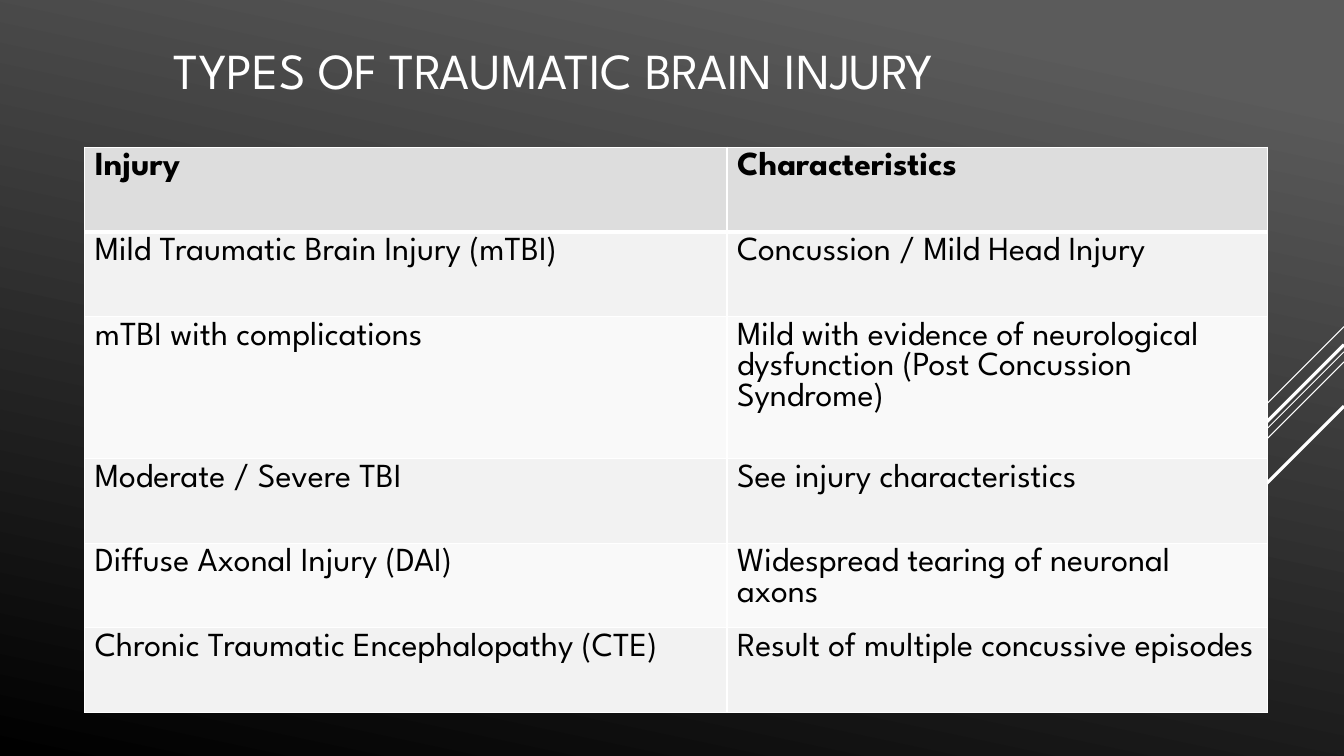
from lxml.etree import SubElement
from pptx import Presentation
from pptx.dml.color import RGBColor
from pptx.enum.shapes import MSO_CONNECTOR
from pptx.enum.text import MSO_ANCHOR, PP_ALIGN
from pptx.oxml.ns import qn
from pptx.util import Inches, Pt

WHITE = RGBColor(0xFF, 0xFF, 0xFF)
BLACK = RGBColor(0x00, 0x00, 0x00)
CHARCOAL = RGBColor(0x5B, 0x5B, 0x5B)
HEADER_GREY = RGBColor(0xDD, 0xDD, 0xDD)
ODD_GREY = RGBColor(0xF2, 0xF2, 0xF2)
EVEN_GREY = RGBColor(0xF9, 0xF9, 0xF9)
FONT = "League Spartan"
SLIDE_WIDTH = 13.33

STRIPES = [(3.24, 1, 0.75), (3.49, 3.26, 0.75), (3.59, 2.07, 0.75),
           (3.42, 1.91, 2.25), (4.03, 1.39, 2.25)]
COLUMN_WIDTHS = [6.37, 5.36]
ROW_HEIGHTS = [0.84, 0.84, 1.41, 0.84, 0.84, 0.84]
INJURIES = [
    ("Injury", "Characteristics"),
    ("Mild Traumatic Brain Injury (mTBI)", "Concussion / Mild Head Injury"),
    ("mTBI with complications",
     "Mild with evidence of neurological dysfunction (Post Concussion Syndrome)"),
    ("Moderate / Severe TBI", "See injury characteristics"),
    ("Diffuse Axonal Injury (DAI)", "Widespread tearing of neuronal axons"),
    ("Chronic Traumatic Encephalopathy (CTE)",
     "Result of multiple concussive episodes"),
]


def write_text(frame, text, size=24, color=BLACK, bold=False):
    """Put formatted left-aligned text in a text frame."""
    frame.word_wrap = True
    paragraph = frame.paragraphs[0]
    paragraph.alignment = PP_ALIGN.LEFT
    run = paragraph.add_run()
    run.text = text
    run.font.name = FONT
    run.font.size = Pt(size)
    run.font.bold = bold
    run.font.color.rgb = color


def paint_background(slide):
    """Fill the slide with a charcoal to black gradient."""
    fill = slide.background.fill
    fill.gradient()
    fill.gradient_angle = 258
    for stop, color, position in zip(fill.gradient_stops, (CHARCOAL, BLACK), (0.1, 1)):
        stop.color.rgb = color
        stop.position = position


def add_stripe(slide, top, run, weight):
    """Draw a 45 degree line down from the right slide edge."""
    stripe = slide.shapes.add_connector(
        MSO_CONNECTOR.STRAIGHT, Inches(SLIDE_WIDTH), Inches(top),
        Inches(SLIDE_WIDTH - run), Inches(top + run))
    stripe.line.color.rgb = WHITE
    stripe.line.width = Pt(weight)
    SubElement(stripe._element.spPr, qn("a:effectLst"))


def add_title(slide, text):
    """Place and fill the title placeholder."""
    title = slide.shapes.title
    title.left, title.top = Inches(1.62), Inches(0)
    title.width, title.height = Inches(10.96), Inches(1.38)
    title.text_frame.vertical_anchor = MSO_ANCHOR.MIDDLE
    write_text(title.text_frame, text, size=36, color=WHITE)


def set_borders(cell, **weights):
    """Give a cell white borders, one point wide unless a side is named."""
    properties = cell._tc.get_or_add_tcPr()
    for side in ("L", "R", "T", "B"):
        width = Pt(weights.get(side, 1))
        line = SubElement(properties, qn(f"a:ln{side}"), w=str(int(width)))
        fill = SubElement(line, qn("a:solidFill"))
        SubElement(fill, qn("a:srgbClr"), val=str(WHITE))


def add_injury_table(slide):
    """Build the table of injuries and their characteristics."""
    table = slide.shapes.add_table(
        len(INJURIES), len(COLUMN_WIDTHS), Inches(0.84), Inches(1.46),
        Inches(sum(COLUMN_WIDTHS)), Inches(sum(ROW_HEIGHTS))).table
    for column, width in zip(table.columns, COLUMN_WIDTHS):
        column.width = Inches(width)
    for index, (height, entries) in enumerate(zip(ROW_HEIGHTS, INJURIES)):
        table.rows[index].height = Inches(height)
        header = index == 0
        shade = HEADER_GREY if header else ODD_GREY if index % 2 else EVEN_GREY
        for cell, entry in zip(table.rows[index].cells, entries):
            set_borders(cell, B=3 if header else 1, T=3 if index == 1 else 1)
            cell.fill.solid()
            cell.fill.fore_color.rgb = shade
            write_text(cell.text_frame, entry, bold=header)


def main():
    """Build and save the slide."""
    presentation = Presentation()
    presentation.slide_width = Inches(SLIDE_WIDTH)
    presentation.slide_height = Inches(7.5)
    slide = presentation.slides.add_slide(presentation.slide_layouts[5])
    paint_background(slide)
    for top, run, weight in STRIPES:
        add_stripe(slide, top, run, weight)
    add_title(slide, "TYPES OF TRAUMATIC BRAIN INJURY")
    add_injury_table(slide)
    presentation.save("out.pptx")


if __name__ == "__main__":
    main()
